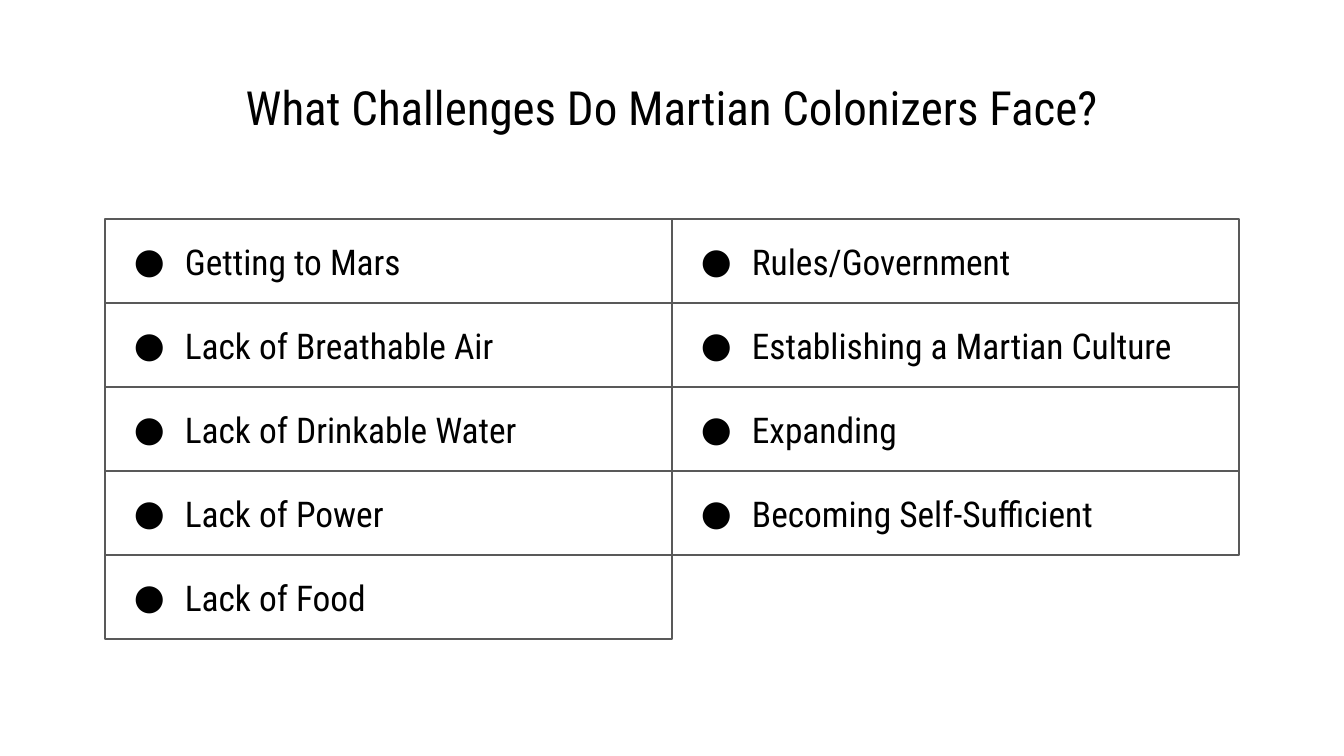
from dataclasses import dataclass

from lxml.etree import SubElement
from pptx import Presentation
from pptx.dml.color import RGBColor
from pptx.enum.shapes import MSO_SHAPE
from pptx.enum.text import MSO_ANCHOR, PP_ALIGN
from pptx.oxml.ns import qn
from pptx.util import Emu, Pt


@dataclass(frozen=True)
class Theme:
    font: str = "Roboto Condensed"
    text: RGBColor = RGBColor(0x00, 0x00, 0x00)
    border: RGBColor = RGBColor(0x59, 0x59, 0x59)
    page: RGBColor = RGBColor(0xFF, 0xFF, 0xFF)
    title_size: float = 25.2
    item_size: float = 19
    border_width: float = 0.75


theme = Theme()
SLIDE_WIDTH, SLIDE_HEIGHT = 1344, 756
INSET = 13


def px(length):
    return Emu(round(length * 914400 / 134.4))


def write(shape, text, size, align):
    """Fill a shape with one paragraph and return that paragraph."""
    frame = shape.text_frame
    frame.word_wrap = True
    frame.margin_left = frame.margin_right = px(INSET)
    frame.margin_top = frame.margin_bottom = px(INSET)
    para = frame.paragraphs[0]
    para.text = text
    para.alignment = align
    para.font.name = theme.font
    para.font.size = Pt(size)
    para.font.color.rgb = theme.text
    return para


deck = Presentation()
deck.slide_width, deck.slide_height = px(SLIDE_WIDTH), px(SLIDE_HEIGHT)
page = deck.slides.add_slide(deck.slide_layouts[6])
page.background.fill.solid()
page.background.fill.fore_color.rgb = theme.page

# Title
title = page.shapes.add_textbox(px(46), px(66), px(1252), px(84))
write(title, "What Challenges Do Martian Colonizers Face?", theme.title_size, PP_ALIGN.CENTER)

# Two columns of challenges, meeting at the middle of the slide
columns = [
    [
        "Getting to Mars",
        "Lack of Breathable Air",
        "Lack of Drinkable Water",
        "Lack of Power",
        "Lack of Food",
    ],
    [
        "Rules/Government",
        "Establishing a Martian Culture",
        "Expanding",
        "Becoming Self-Sufficient",
    ],
]
grid_left, grid_top = 105, 219
box_width = SLIDE_WIDTH // 2 - grid_left
box_height = 84

for column, challenges in enumerate(columns):
    for row, challenge in enumerate(challenges):
        box = page.shapes.add_shape(
            MSO_SHAPE.RECTANGLE,
            px(grid_left + column * box_width),
            px(grid_top + row * box_height),
            px(box_width),
            px(box_height),
        )
        box.shadow.inherit = False
        box.fill.background()
        box.line.color.rgb = theme.border
        box.line.width = Pt(theme.border_width)
        box.text_frame.vertical_anchor = MSO_ANCHOR.MIDDLE
        para = write(box, challenge, theme.item_size, PP_ALIGN.LEFT)

        # Hanging bullet
        properties = para._p.get_or_add_pPr()
        properties.set("marL", str(px(67)))
        properties.set("indent", str(-px(51)))
        bullet_color = SubElement(properties, qn("a:buClr"))
        SubElement(bullet_color, qn("a:srgbClr"), val=str(theme.text))
        SubElement(properties, qn("a:buFont"), typeface=theme.font)
        SubElement(properties, qn("a:buChar"), char="●")
        # The schema wants the bullet before the paragraph's font
        properties.append(properties.find(qn("a:defRPr")))

deck.save("out.pptx")
